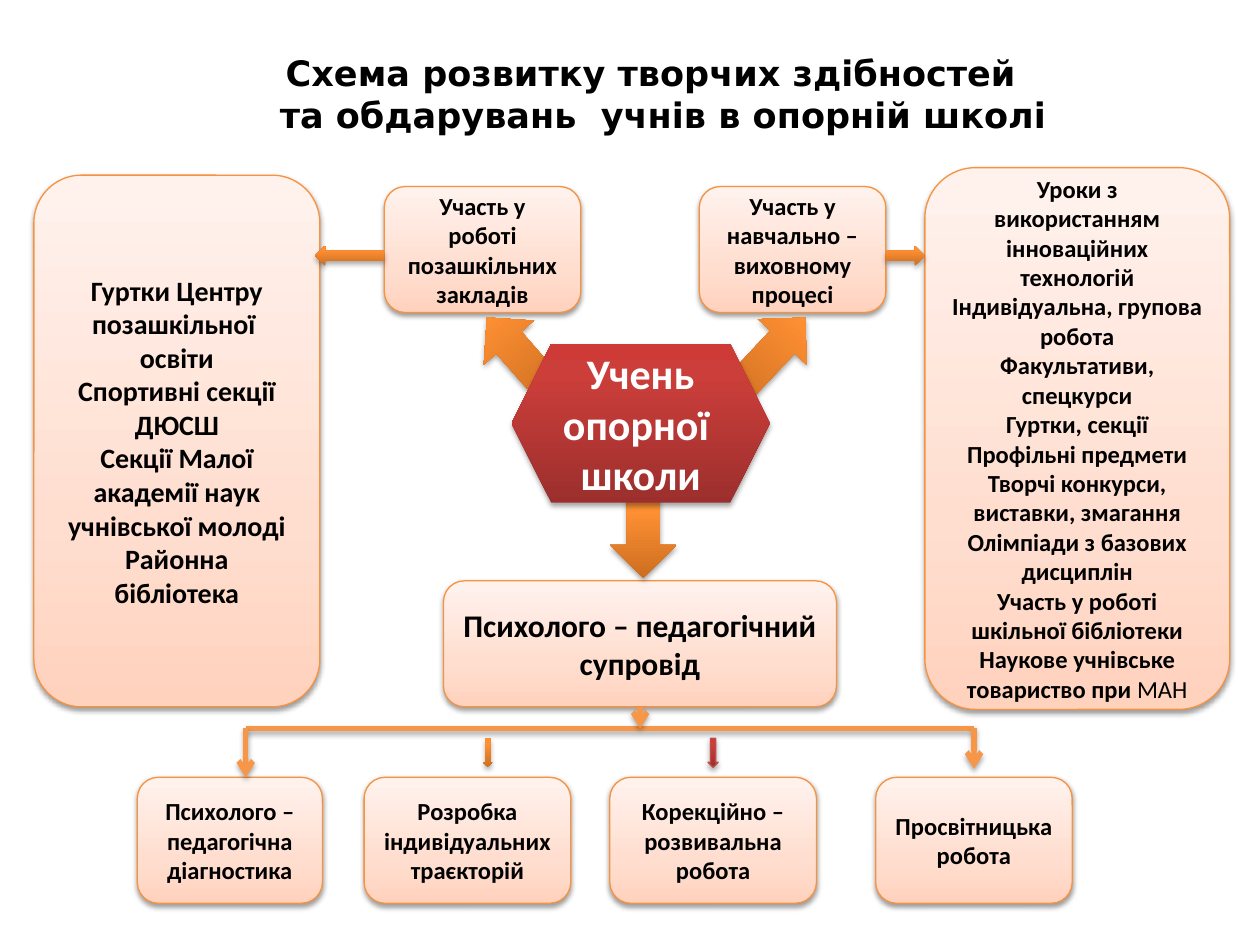
from copy import deepcopy
from pptx import Presentation
from pptx.dml.color import RGBColor
from pptx.enum.shapes import MSO_CONNECTOR, MSO_SHAPE
from pptx.enum.text import MSO_ANCHOR, MSO_AUTO_SIZE, PP_ALIGN
from pptx.oxml import parse_xml
from pptx.oxml.ns import nsdecls, qn
from pptx.util import Pt

BLACK = RGBColor(0, 0, 0)
WHITE = RGBColor(255, 255, 255)
EDGE = RGBColor(0xF6, 0x92, 0x40)
ORANGE = RGBColor(0xF7, 0x96, 0x46)
RED = RGBColor(0xBF, 0x4C, 0x48)
PEACH_FILL = [(0, RGBColor(0xFF, 0xD2, 0xBD)), (0.35, RGBColor(0xFF, 0xDE, 0xD0)),
              (1, RGBColor(0xFF, 0xF2, 0xED))]
ORANGE_FILL = [(0, RGBColor(0xCC, 0x6E, 0x20)), (0.8, RGBColor(0xFF, 0x90, 0x34)),
               (1, RGBColor(0xFF, 0x91, 0x36))]
RED_FILL = [(0, RGBColor(0x9C, 0x2F, 0x2D)), (0.8, RGBColor(0xCB, 0x3E, 0x3A)),
            (1, RGBColor(0xCE, 0x3B, 0x37))]

CLUBS = ["Гуртки Центру позашкільної  освіти", "Спортивні секції ДЮСШ",
         "Секції Малої академії наук учнівської молоді", "Районна бібліотека"]
LESSONS = ["Уроки з використанням інноваційних технологій",
           "Індивідуальна, групова робота", "Факультативи, спецкурси",
           "Гуртки, секції", "Профільні предмети",
           "Творчі конкурси, виставки, змагання",
           "Олімпіади з базових дисциплін",
           "Участь у роботі шкільної бібліотеки",
           "Наукове учнівське товариство при "]
STEPS = [(0, 105.8, "Психолого – педагогічна діагностика"),
         (129.6, 118.1, "Розробка індивідуальних траєкторій"),
         (270, 118.1, "Корекційно – розвивальна робота"),
         (421.9, 112.3, "Просвітницька робота")]


def add_shadow(item, alpha, dist):
    props = item._element.spPr
    for old in props.findall(qn("a:effectLst")):
        props.remove(old)
    props.append(parse_xml(
        f'<a:effectLst {nsdecls("a")}><a:outerShdw blurRad="{Pt(3.1)}" dist="{Pt(dist)}" '
        f'dir="5400000" rotWithShape="0"><a:srgbClr val="000000">'
        f'<a:alpha val="{alpha * 1000}"/></a:srgbClr></a:outerShdw></a:effectLst>'))


def write(frame, lines, size, color=BLACK, face="Calibri"):
    for i, line in enumerate(lines):
        para = frame.paragraphs[0] if i == 0 else frame.add_paragraph()
        para.alignment = PP_ALIGN.CENTER
        run = para.add_run()
        run.text = line
        for key, value in {"size": Pt(size), "name": face, "bold": True}.items():
            setattr(run.font, key, value)
        run.font.color.rgb = color


def add_block(slide, kind, box, stops, edge=None, alpha=35, dist=1.8):
    """Add a preset shape shaded from bottom to top."""
    shape = slide.shapes.add_shape(kind, *map(Pt, box))
    shape.fill.gradient()
    shape.fill.gradient_angle = 90
    row = shape._element.spPr.find(".//" + qn("a:gsLst"))
    row.append(deepcopy(row[0]))
    for stop, (place, color) in zip(shape.fill.gradient_stops, stops):
        stop.position = place
        stop.color.rgb = color
    if edge is None:
        shape.line.fill.background()
    else:
        shape.line.color.rgb = edge
        shape.line.width = Pt(0.75)
    add_shadow(shape, alpha, dist)
    return shape


def add_card(slide, box, lines, size):
    card = add_block(slide, MSO_SHAPE.ROUNDED_RECTANGLE, box, PEACH_FILL, EDGE, 38, 1.6)
    card.text_frame.word_wrap = True
    card.text_frame.vertical_anchor = MSO_ANCHOR.MIDDLE
    write(card.text_frame, lines, size)
    return card


def add_line(slide, start, end, head=False):
    line = slide.shapes.add_connector(MSO_CONNECTOR.STRAIGHT, *map(Pt, (*start, *end)))
    line.line.color.rgb = ORANGE
    line.line.width = Pt(3)
    if head:
        line.line._get_or_add_ln().append(
            parse_xml(f'<a:tailEnd {nsdecls("a")} type="arrow"/>'))
    add_shadow(line, 35, 1.8)


def add_title(slide, box):
    frame = slide.shapes.add_textbox(*map(Pt, box)).text_frame
    frame.word_wrap = False
    frame.auto_size = MSO_AUTO_SIZE.SHAPE_TO_FIT_TEXT
    write(frame, ["Схема розвитку творчих здібностей ",
                  " та обдарувань  учнів в опорній школі"], 20, face="DejaVu Sans")


def add_left(slide, box):
    x, y, w, h = box
    add_card(slide, (x, y, 163.4, h), CLUBS, 16)
    edge = x + w - 112.3
    add_card(slide, (edge, y + 6.5, 112.3, 72),
             ["Участь у роботі позашкільних закладів"], 14)
    add_block(slide, MSO_SHAPE.LEFT_ARROW, (edge - 39.6, y + 40.3, 39.6, 11.5), ORANGE_FILL)


def add_right(slide, box):
    x, y, w, h = box
    panel = add_card(slide, (x + w - 174.2, y, 174.2, h), LESSONS, 14)
    run = panel.text_frame.paragraphs[-1].add_run()
    run.text = "МАН"
    for key, value in {"size": Pt(14), "name": "Calibri", "bold": False}.items():
        setattr(run.font, key, value)
    run.font.color.rgb = BLACK
    add_card(slide, (x, y + 10.8, 106.6, 72),
             ["Участь у навчально – виховному процесі"], 14)
    add_block(slide, MSO_SHAPE.RIGHT_ARROW, (x + 106.6, y + 44.6, 22.3, 11.5), ORANGE_FILL)


def add_core(slide, box):
    """Place the pupil hexagon over its three outgoing arrows."""
    x, y, w, h = box
    for kind, dx, dy, tall, turn in [(MSO_SHAPE.UP_ARROW, -18, -20.9, 46.1, 318.8),
                                     (MSO_SHAPE.UP_ARROW, 130.3, -22.4, 54, 43.1),
                                     (MSO_SHAPE.DOWN_ARROW, 56.2, 84.9, 49, 0)]:
        arrow = add_block(slide, kind, (x + dx, y + dy, 38.2, tall), ORANGE_FILL)
        arrow.rotation = turn
    core = add_block(slide, MSO_SHAPE.HEXAGON, box, RED_FILL)
    core.text_frame.word_wrap = True
    core.text_frame.vertical_anchor = MSO_ANCHOR.MIDDLE
    write(core.text_frame, ["Учень", "опорної  школи"], 24, WHITE)


def add_support(slide, box):
    """Place the support card and the four steps that branch from it."""
    x, y, w, h = box
    add_card(slide, (x + 174.9, y, 224.6, 72), ["Психолого – педагогічний супровід"], 18)
    top = y + h - 72
    for dx, wide, text in STEPS:
        add_card(slide, (x + dx, top, wide, 72), [text], 14)
    rail, left, mid, right = y + 84.3, x + 61.9, x + 287.3, x + 478.1
    add_line(slide, (left, rail), (right, rail))
    for start, end in [((mid, y + 72), (mid, rail)),
                       ((left, rail), (left, top)),
                       ((right, rail), (right, top - 5))]:
        add_line(slide, start, end, head=True)
    for dx, stops, edge in [(197.3, ORANGE_FILL, None), (326.1, RED_FILL, RED)]:
        add_block(slide, MSO_SHAPE.DOWN_ARROW, (x + dx, y + 90, 5.8, 16.6), stops, edge)


def main():
    deck = Presentation()
    deck.slide_width, deck.slide_height = Pt(720), Pt(540)
    slide = deck.slides.add_slide(deck.slide_layouts[6])
    add_title(slide, (144.7, 25.9, 461.5, 55.4))
    add_left(slide, (19.4, 100.1, 312.5, 303.8))
    add_right(slide, (399.6, 95.8, 303.1, 309.6))
    add_support(slide, (78.5, 331.9, 534.2, 184.3))
    add_core(slide, (292.3, 196.6, 147.6, 90.7))
    deck.save("out.pptx")


if __name__ == "__main__":
    main()
